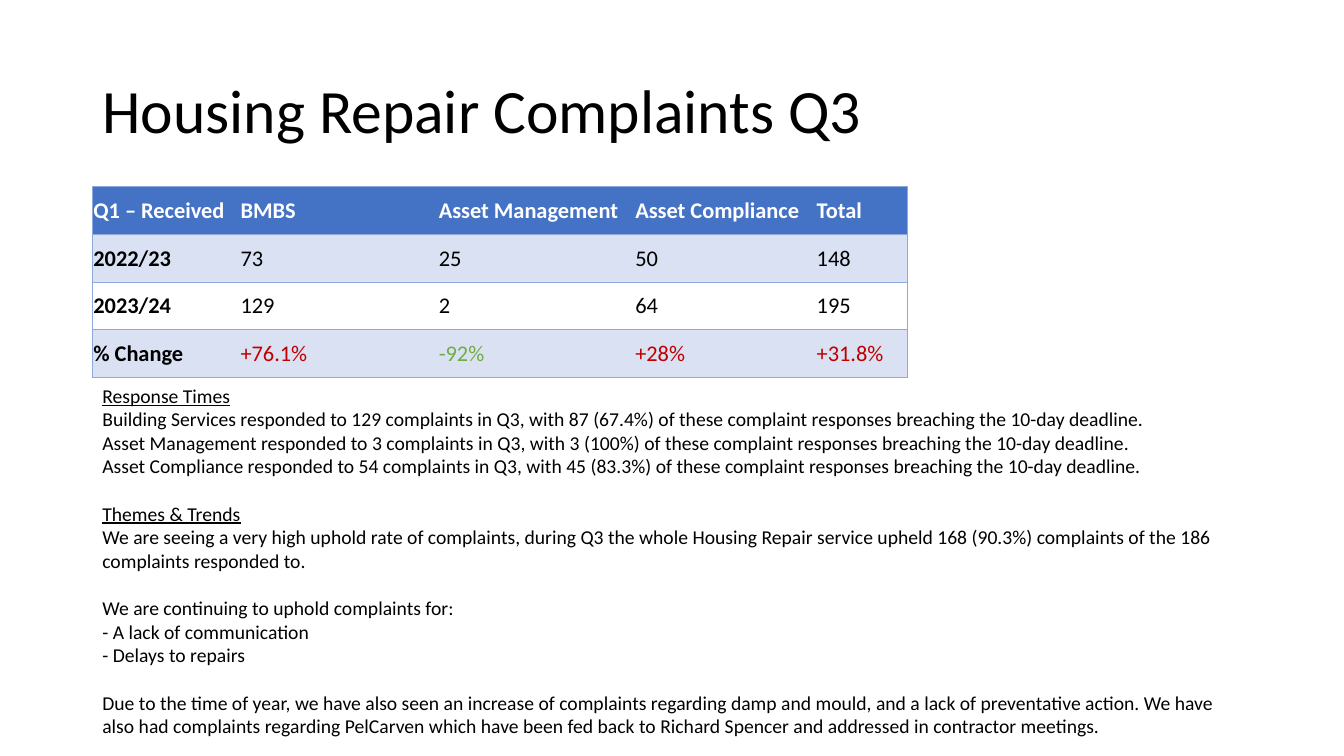
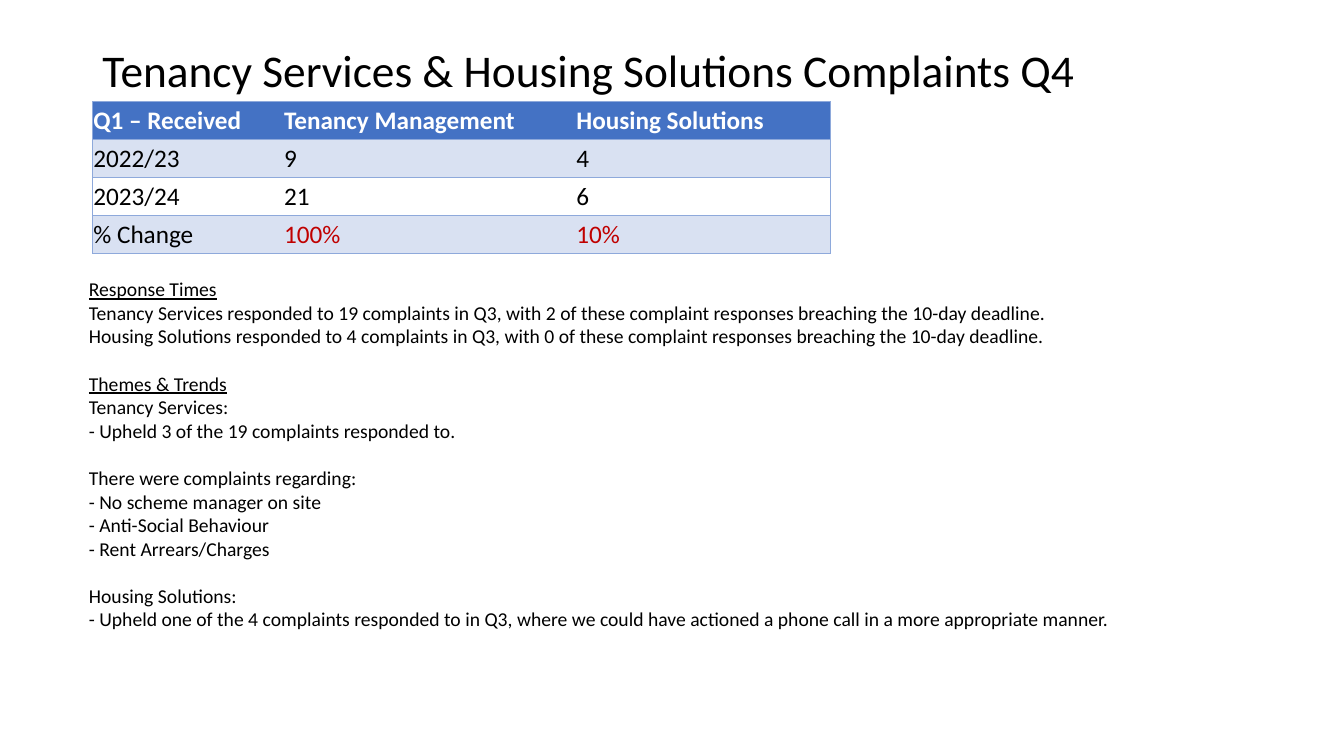
"""Build two slides on housing complaints, each with a title, a table and notes."""
from dataclasses import dataclass

import lxml.etree
import pptx
import pptx.dml.color
import pptx.enum.text
import pptx.oxml
import pptx.oxml.ns
import pptx.util

WIDE, HIGH = 13.33, 7.5
COLS, ROWS = 80, 45
LEFT, SPAN = 5.5, 69
FONT = "Calibri"
BLACK, WHITE, RED, GREEN = "000000", "FFFFFF", "C00000", "70AD47"
HEAD, BAND, EDGE = "4472C4", "D9E1F2", "8EA9DB"
PLAIN = "{2D5ABB26-0587-4C30-8999-92F81FD0307C}"
NOTE, GAP = 14, 17


@dataclass
class Block:
    lines: list[str]
    head: str = ""


@dataclass
class Grid:
    top: float
    cols: list[float]
    row: float
    size: float
    bold: bool
    cells: list[list[str]]


@dataclass
class Page:
    title: str
    size: float
    tall: float
    grid: Grid
    box: tuple[float, float, float, float]
    blocks: list[Block]


PAGES = [
    Page(
        "Housing Repair Complaints Q3", 44, 8.7,
        Grid(11.1, [8.76, 11.8, 11.7, 10.8, 5.45], 2.84, 16, True, [
            ["Q1 – Received", "BMBS", "Asset Management", "Asset Compliance", "Total"],
            ["2022/23", "73", "25", "50", "148"],
            ["2023/24", "129", "2", "64", "195"],
            ["% Change", "+76.1%", "-92%", "+28%", "+31.8%"],
        ]),
        (LEFT, 22.55, SPAN, 23.2),
        [
            Block([
                "Building Services responded to 129 complaints in Q3, with 87 (67.4%) of these complaint responses breaching the 10-day deadline.",
                "Asset Management responded to 3 complaints in Q3, with 3 (100%) of these complaint responses breaching the 10-day deadline.",
                "Asset Compliance responded to 54 complaints in Q3, with 45 (83.3%) of these complaint responses breaching the 10-day deadline.",
            ], "Response Times"),
            Block([
                "We are seeing a very high uphold rate of complaints, during Q3 the whole Housing Repair service upheld 168 (90.3%) complaints of the 186 complaints responded to.",
            ], "Themes & Trends"),
            Block([
                "We are continuing to uphold complaints for:",
                "- A lack of communication",
                "- Delays to repairs",
            ]),
            Block([
                "Due to the time of year, we have also seen an increase of complaints regarding damp and mould, and a lack of preventative action. We have also had complaints regarding PelCarven which have been fed back to Richard Spencer and addressed in contractor meetings.",
            ]),
        ],
    ),
    Page(
        "Tenancy Services & Housing Solutions Complaints Q4", 32.4, 3.84,
        Grid(6.05, [11.35, 17.4, 15.2], 2.26, 18, False, [
            ["Q1 – Received", "Tenancy Management", "Housing Solutions"],
            ["2022/23", "9", "4"],
            ["2023/24", "21", "6"],
            ["% Change", "100%", "10%"],
        ]),
        (4.7, 16.2, SPAN, 21.85),
        [
            Block([
                "Tenancy Services responded to 19 complaints in Q3, with 2 of these complaint responses breaching the 10-day deadline.",
                "Housing Solutions responded to 4 complaints in Q3, with 0 of these complaint responses breaching the 10-day deadline.",
            ], "Response Times"),
            Block([
                "Tenancy Services:",
                "- Upheld 3 of the 19 complaints responded to.",
            ], "Themes & Trends"),
            Block([
                "There were complaints regarding:",
                "- No scheme manager on site",
                "- Anti-Social Behaviour",
                "- Rent Arrears/Charges",
            ]),
            Block([
                "Housing Solutions:",
                "- Upheld one of the 4 complaints responded to in Q3, where we could have actioned a phone call in a more appropriate manner.",
            ]),
        ],
    ),
]


def tint(code: str) -> pptx.dml.color.RGBColor:
    return pptx.dml.color.RGBColor.from_string(code)


def across(cols: float) -> int:
    return pptx.util.Inches(WIDE * cols / COLS)


def down(rows: float) -> int:
    return pptx.util.Inches(HIGH * rows / ROWS)


def style(para, size: float, code: str = BLACK, bold: bool = False) -> None:
    font = para.font
    font.name, font.size, font.bold = FONT, pptx.util.Pt(size), bold
    font.color.rgb = tint(code)


def border(cell, sides: list[str]) -> None:
    props = cell._tc.get_or_add_tcPr()
    space = pptx.oxml.ns.nsdecls("a")
    for spot, side in enumerate(sides):
        line = pptx.oxml.parse_xml(
            f'<a:ln{side} {space} w="6350"><a:solidFill>'
            f'<a:srgbClr val="{EDGE}"/></a:solidFill></a:ln{side}>'
        )
        props.insert(spot, line)


def add_title(slide, page: Page) -> None:
    title = slide.shapes.title
    title.left, title.top = across(LEFT), down(2.4)
    title.width, title.height = across(SPAN), down(page.tall)
    frame = title.text_frame
    frame.text = page.title
    frame.auto_size = pptx.enum.text.MSO_AUTO_SIZE.NONE
    frame.vertical_anchor = pptx.enum.text.MSO_ANCHOR.MIDDLE
    para = frame.paragraphs[0]
    para.alignment = pptx.enum.text.PP_ALIGN.LEFT
    para.line_spacing = 0.9
    style(para, page.size)


def add_notes(slide, page: Page) -> None:
    left, top, width, height = page.box
    box = slide.shapes.add_textbox(across(left), down(top), across(width), down(height))
    frame = box.text_frame
    frame.word_wrap = True
    frame.auto_size = pptx.enum.text.MSO_AUTO_SIZE.SHAPE_TO_FIT_TEXT
    para = frame.paragraphs[0]
    for rank, block in enumerate(page.blocks):
        lines = [block.head] * bool(block.head) + block.lines
        for spot, text in enumerate(lines):
            if rank or spot:
                para = frame.add_paragraph()
            para.text = text
            style(para, NOTE)
            para.font.underline = text == block.head
            if rank and not spot:
                para.space_before = pptx.util.Pt(GAP)


def fill_cell(cell, grid: Grid, row: int, col: int) -> None:
    text = grid.cells[row][col]
    cell.text = text
    cell.vertical_anchor = pptx.enum.text.MSO_ANCHOR.MIDDLE
    cell.margin_left = cell.margin_right = cell.margin_top = pptx.util.Inches(0.01)
    cell.margin_bottom = 0
    code = BLACK
    if row == 0:
        code = WHITE
    elif row == len(grid.cells) - 1 and col:
        code = GREEN if text.startswith("-") else RED
    style(cell.text_frame.paragraphs[0], grid.size, code, row == 0 or (grid.bold and col == 0))
    if row == 0 or row % 2:
        cell.fill.solid()
        cell.fill.fore_color.rgb = tint(BAND if row else HEAD)
    else:
        cell.fill.background()
    ends = ["L"] * (col == 0) + ["R"] * (col == len(grid.cols) - 1)
    border(cell, ends + ["T", "B"])


def add_grid(slide, grid: Grid) -> None:
    count = len(grid.cells)
    shape = slide.shapes.add_table(
        count, len(grid.cols), across(LEFT), down(grid.top),
        across(sum(grid.cols)), down(grid.row * count),
    )
    table = shape.table
    table.first_row = table.horz_banding = False
    table._tbl.tblPr.find(pptx.oxml.ns.qn("a:tableStyleId")).text = PLAIN
    for col, width in zip(table.columns, grid.cols):
        col.width = across(width)
    for row, line in enumerate(table.rows):
        line.height = down(grid.row)
        for col, cell in enumerate(line.cells):
            fill_cell(cell, grid, row, col)


def main() -> None:
    deck = pptx.Presentation()
    deck.slide_width, deck.slide_height = across(COLS), down(ROWS)
    for page in PAGES:
        slide = deck.slides.add_slide(deck.slide_layouts.get_by_name("Title Only"))
        add_title(slide, page)
        add_notes(slide, page)
        add_grid(slide, page.grid)
    deck.save("out.pptx")


if __name__ == "__main__":
    main()
